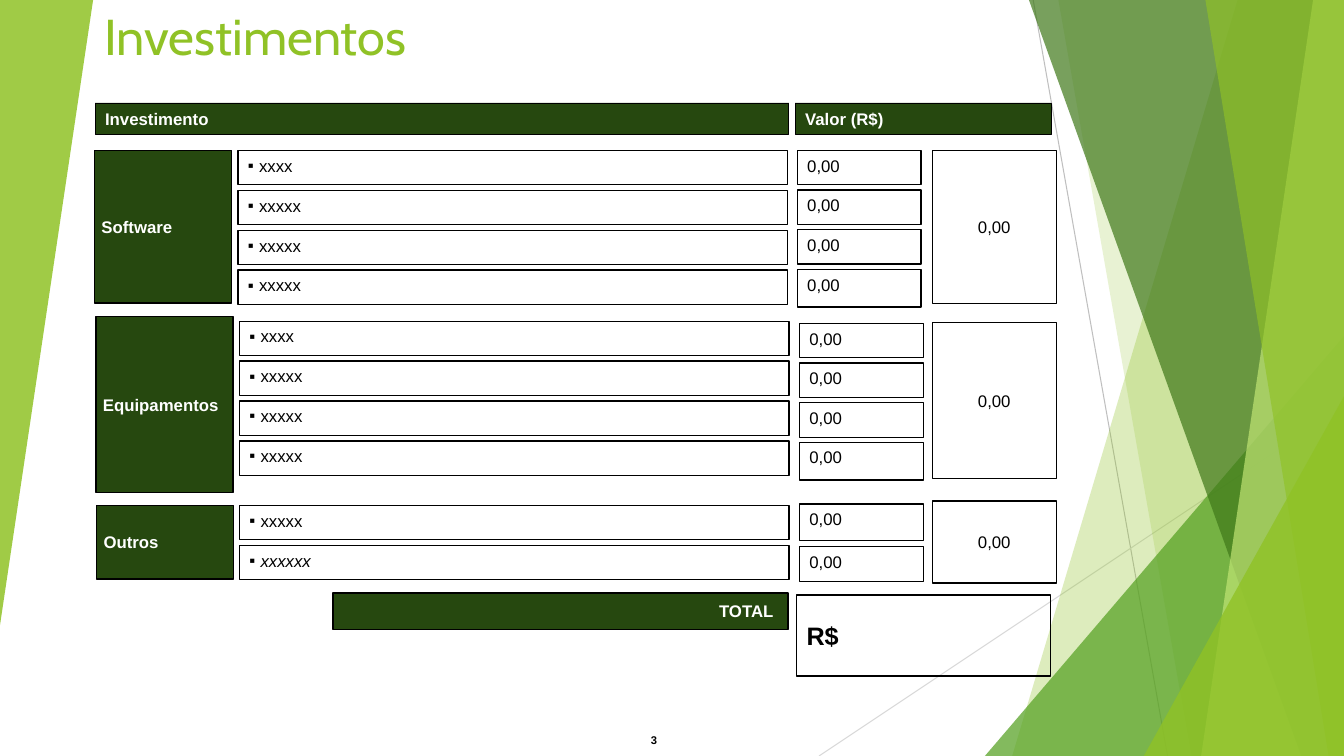
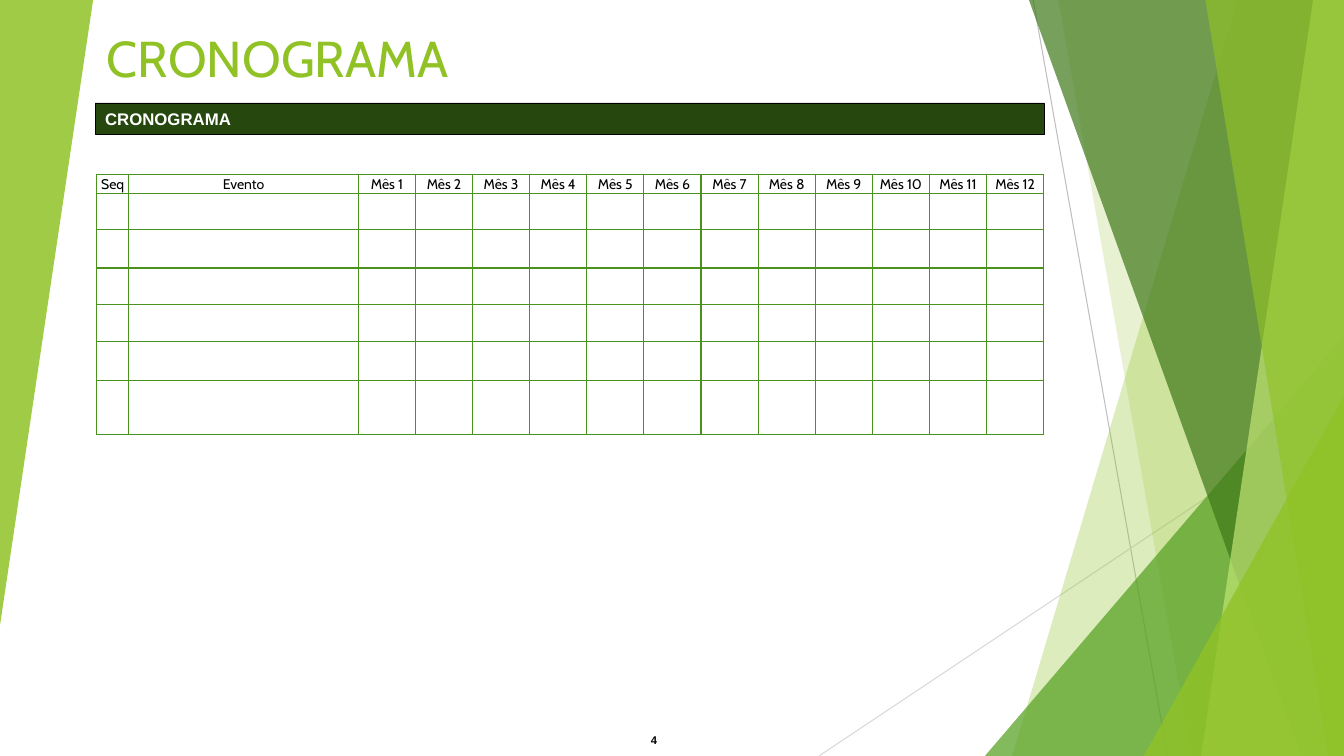
from dataclasses import dataclass

from lxml.etree import SubElement
from pptx import Presentation
from pptx.dml.color import RGBColor
from pptx.enum.shapes import MSO_CONNECTOR, MSO_SHAPE
from pptx.enum.text import MSO_ANCHOR, MSO_AUTO_SIZE, PP_ALIGN
from pptx.oxml import parse_xml
from pptx.oxml.ns import nsdecls, qn
from pptx.util import Pt


@dataclass(frozen=True)
class Theme:
    lime: str = "90C226"
    pale_lime: str = "C0E474"
    leaf: str = "54A021"
    forest: str = "3F7819"
    band: str = "26480F"
    grid: str = "4B911D"
    gray: str = "BFBFBF"
    light_gray: str = "D9D9D9"
    black: str = "000000"
    white: str = "FFFFFF"
    title_font: str = "Cabin"
    body_font: str = "Arial"
    title_size: float = 36
    amount_size: float = 18
    body_size: float = 12
    table_size: float = 10
    number_size: float = 8


@dataclass(frozen=True)
class Section:
    """One group of investments; every top but the first is measured from it."""
    label: str
    items: tuple
    left: float
    top: float
    height: float
    item_left: float
    item_top: float
    value_left: float
    value_top: float
    value_step: float
    value_heights: tuple
    sum_top: float
    sum_height: float


THEME = Theme()
WIDTH, HEIGHT = 960, 540
BAND_TOP, BAND_HEIGHT = 73.5, 22.5
ITEM_WIDTH, ITEM_HEIGHT, ITEM_STEP = 392.5, 24.5, 28.5
VALUE_WIDTH, SUM_LEFT = 88.5, 666
LABEL_WIDTH = 98
LABEL_INSETS = (5, 3.6, 3.6, 3.6)

FACETS = [  # top x, bottom x, colour, opacity in percent
    (884, 723, THEME.lime, 30),
    (756, 851, THEME.lime, 20),
    None,
    (735, 929.5, THEME.forest, 70),
    (938, 858, THEME.pale_lime, 70),
    (861, 949, THEME.lime, 65),
    None,
]
CORNERS = [  # left, top, colour, opacity in percent
    (703.5, 240, THEME.leaf, 72),
    (817, 283, THEME.lime, 80),
]

SECTIONS = [
    Section("Software", ("xxxx", "xxxxx", "xxxxx", "xxxxx"), 67.5, 107.5, 109,
            170, 0, 569.5, 0, 28.3, (24.5, 24.5, 24.5, 27), 0, 109.5),
    Section("Equipamentos", ("xxxx", "xxxxx", "xxxxx", "xxxxx"), 68.5, 226, 126,
            171, 3.5, 571, 5, 28.3, (24.5, 24.5, 25, 27), 4.5, 111.5),
    Section("Outros", ("xxxxx", "xxxxxx"), 69, 361, 52.5,
            171, 0, 571, -1, 30.5, (26, 25), -3, 58.5),
]


def color(code):
    return RGBColor.from_string(code)


def paint(shape, code, opacity=100):
    shape.shadow.inherit = False
    shape.fill.solid()
    shape.fill.fore_color.rgb = color(code)
    shape.line.fill.background()
    if opacity < 100:
        tint = shape.fill._xPr.find(qn("a:solidFill"))[0]
        SubElement(tint, qn("a:alpha"), val=str(opacity * 1000))


def style(para, size, code, font=THEME.body_font, bold=False, italic=False, align=PP_ALIGN.LEFT):
    para.alignment = align
    para.font.name = font
    para.font.size = Pt(size)
    para.font.bold = bold
    para.font.italic = italic
    para.font.color.rgb = color(code)


def set_insets(target, left, top, right, bottom):
    target.margin_left, target.margin_top = Pt(left), Pt(top)
    target.margin_right, target.margin_bottom = Pt(right), Pt(bottom)


def add_triangle(shapes, left, top, width, height, code, opacity):
    triangle = shapes.add_shape(MSO_SHAPE.ISOSCELES_TRIANGLE,
                                Pt(left), Pt(top), Pt(width), Pt(height))
    triangle.adjustments[0] = 1
    paint(triangle, code, opacity)
    return triangle


def add_facet(shapes, top_x, bottom_x, code, opacity):
    """Fill the area between a slanted edge and the right side of the slide."""
    builder = shapes.build_freeform(Pt(top_x), 0)
    builder.add_line_segments([(Pt(WIDTH), 0), (Pt(WIDTH), Pt(HEIGHT)), (Pt(bottom_x), Pt(HEIGHT))])
    paint(builder.convert_to_shape(), code, opacity)


def add_hairline(shapes, start, end, code):
    line = shapes.add_connector(MSO_CONNECTOR.STRAIGHT, *(Pt(value) for value in start + end))
    line.line.color.rgb = color(code)
    line.line.width = Pt(0.75)
    SubElement(line._element.spPr, qn("a:effectLst"))


def decorate_layout(layout, page):
    """Draw the backdrop as a group, then hand it to the layout all pages use."""
    group = page.shapes.add_group_shape()
    shapes = group.shapes
    add_hairline(shapes, (738, 0), (834, HEIGHT), THEME.gray)
    add_hairline(shapes, (WIDTH, 290), (585, HEIGHT), THEME.light_gray)
    corners = iter(CORNERS)
    for facet in FACETS:
        if facet:
            add_facet(shapes, *facet)
        else:
            left, top, code, opacity = next(corners)
            add_triangle(shapes, left, top, WIDTH - left, HEIGHT - top, code, opacity)
    add_triangle(shapes, 0, 0, 66.5, 446.5, THEME.lime, 85).rotation = 180
    for number, properties in enumerate(group._element.iter(qn("p:cNvPr")), 100):
        properties.set("id", str(number))
    layout.shapes._spTree.insert(2, group._element)


def add_title(page, text, left, top, height):
    title = page.shapes.title
    title.left, title.top, title.width, title.height = Pt(left), Pt(top), Pt(677), Pt(height)
    frame = title.text_frame
    frame.text = text
    frame.auto_size = MSO_AUTO_SIZE.NONE
    frame.vertical_anchor = MSO_ANCHOR.TOP
    style(frame.paragraphs[0], THEME.title_size, THEME.lime, THEME.title_font)


def add_page_number(page, number):
    box = page.shapes.add_textbox(Pt(465), Pt(525), Pt(27.5), Pt(8))
    frame = box.text_frame
    frame.word_wrap = True
    frame.vertical_anchor = MSO_ANCHOR.BOTTOM
    set_insets(frame, 0, 0, 0, 0)
    frame.text = str(number)
    frame.paragraphs[0].line_spacing = 0.8
    style(frame.paragraphs[0], THEME.number_size, THEME.black, bold=True)


def add_box(page, text, left, top, width, height, fill=None, border=1,
            anchor=MSO_ANCHOR.MIDDLE, bullet=False, insets=(7.2, 3.6, 7.2, 3.6),
            size=THEME.body_size, bold=False, italic=False, align=PP_ALIGN.LEFT):
    box = page.shapes.add_shape(MSO_SHAPE.RECTANGLE, Pt(left), Pt(top), Pt(width), Pt(height))
    box.shadow.inherit = False
    if fill:
        paint(box, fill)
    else:
        box.fill.background()
    box.line.color.rgb = color(THEME.black)
    box.line.width = Pt(border)
    frame = box.text_frame
    frame.word_wrap = True
    frame.vertical_anchor = anchor
    set_insets(frame, *insets)
    frame.text = text
    para = frame.paragraphs[0]
    if bullet:
        properties = para._p.get_or_add_pPr()
        properties.set("marL", str(Pt(8)))
        properties.set("indent", str(-Pt(8)))
        SubElement(properties, qn("a:buFont"), typeface=THEME.body_font)
        SubElement(properties, qn("a:buChar"), char="▪")
    style(para, size, THEME.white if fill else THEME.black, bold=bold, italic=italic, align=align)


def add_band(page, text, left, width):
    add_box(page, text, left, BAND_TOP, width, BAND_HEIGHT, THEME.band, border=0.5, bold=True)


def add_section(page, section):
    add_box(page, section.label, section.left, section.top, LABEL_WIDTH, section.height,
            THEME.band, insets=LABEL_INSETS, bold=True)
    for row, (item, value_height) in enumerate(zip(section.items, section.value_heights)):
        add_box(page, item, section.item_left, section.top + section.item_top + row * ITEM_STEP,
                ITEM_WIDTH, ITEM_HEIGHT, anchor=MSO_ANCHOR.TOP, bullet=True,
                italic=item == "xxxxxx")
        add_box(page, "0,00", section.value_left,
                section.top + section.value_top + row * section.value_step,
                VALUE_WIDTH, value_height, anchor=MSO_ANCHOR.TOP)
    add_box(page, "0,00", SUM_LEFT, section.top + section.sum_top, VALUE_WIDTH,
            section.sum_height, align=PP_ALIGN.CENTER)


def add_grand_total(page, left, top):
    add_box(page, "TOTAL", left, top, 325, 26, THEME.band, insets=(7.2, 3.6, 10.5, 3.6),
            bold=True, align=PP_ALIGN.RIGHT)
    add_box(page, "R$", left + 331, top + 1.5, 181.5, 58, size=THEME.amount_size, bold=True)


def set_borders(cell):
    properties = cell._tc.get_or_add_tcPr()
    for place, side in enumerate("LRTB"):
        properties.insert(place, parse_xml(
            f'<a:ln{side} {nsdecls("a")} w="{Pt(1)}"><a:solidFill>'
            f'<a:srgbClr val="{THEME.grid}"/></a:solidFill></a:ln{side}>'))


def add_schedule(page, left, top):
    headings = ["Seq", "Evento"] + [f"Mês {month}" for month in range(1, 13)]
    widths = [23, 164] + [40.8] * 12
    heights = [13.5, 26, 27.5, 26, 26.5, 28, 38.5]
    table = page.shapes.add_table(len(heights), len(widths), Pt(left), Pt(top),
                                  Pt(sum(widths)), Pt(sum(heights))).table
    table.first_row = table.horz_banding = False
    for column, width in zip(table.columns, widths):
        column.width = Pt(width)
    for row, height in zip(table.rows, heights):
        row.height = Pt(height)
    for cell, heading in zip(table.rows[0].cells, headings):
        cell.text = heading
    for cell in table.iter_cells():
        cell.fill.background()
        cell.vertical_anchor = MSO_ANCHOR.MIDDLE
        set_insets(cell, 0.7, 0.7, 0.7, 0)
        set_borders(cell)
        style(cell.text_frame.paragraphs[0], THEME.table_size, THEME.black,
              THEME.title_font, align=PP_ALIGN.CENTER)


def build_investments(page):
    add_title(page, "Investimentos", 67.5, 0, 103.5)
    add_band(page, "Investimento", 68, 495.5)
    add_band(page, "Valor (R$)", 568, 183)
    for section in SECTIONS:
        add_section(page, section)
    add_grand_total(page, 238, 423.5)


def build_schedule(page):
    add_title(page, "CRONOGRAMA", 69, 16, 49)
    add_band(page, "CRONOGRAMA", 68, 678)
    add_schedule(page, 69, 124.5)


def main():
    deck = Presentation()
    deck.slide_width, deck.slide_height = Pt(WIDTH), Pt(HEIGHT)
    layout = deck.slide_layouts[5]
    for number, build in enumerate((build_investments, build_schedule), 3):
        page = deck.slides.add_slide(layout)
        if len(deck.slides) == 1:
            decorate_layout(layout, page)
        add_page_number(page, number)
        build(page)
    deck.save("out.pptx")


if __name__ == "__main__":
    main()
